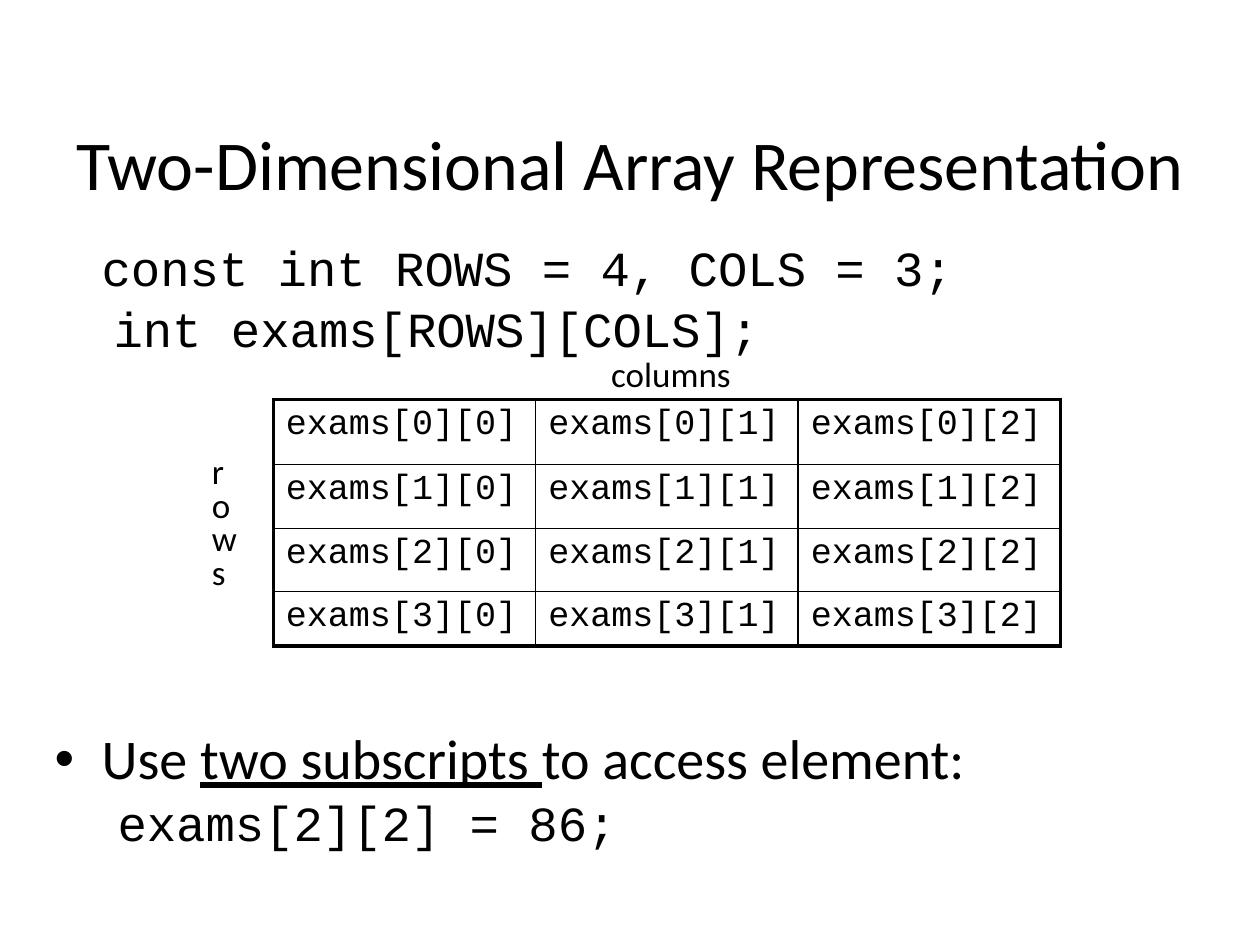
from dataclasses import dataclass

from lxml.etree import SubElement
from pptx import Presentation
from pptx.dml.color import RGBColor
from pptx.enum.text import MSO_ANCHOR as Anchor, MSO_AUTO_SIZE as AutoSize, PP_ALIGN as Align
from pptx.oxml import parse_xml
from pptx.oxml.ns import nsdecls, qn
from pptx.util import Cm, Pt


@dataclass(frozen=True)
class Theme:
    ink: str = "000000"
    sans: str = "Calibri"
    mono: str = "Courier New"
    title: int = 40
    bullet: int = 32
    code: int = 28
    label: int = 20
    outer: float = 2.25
    inner: float = 1


T = Theme()


def set_all(obj, **values):
    for name, value in values.items():
        setattr(obj, name, value)


def add_run(p, text, size, font=T.sans, **extra):
    r = p.add_run()
    r.text = text
    set_all(r.font, size=Pt(size), name=font, **extra)
    r.font.color.rgb = RGBColor.from_string(T.ink)


def add_paragraph(tf, first=False, **spacing):
    p = tf.paragraphs[0] if first else tf.add_paragraph()
    set_all(p, **spacing)
    return p


def indent(p, left, hanging=0, bullet=None):
    pPr = p._p.get_or_add_pPr()
    pPr.set("marL", str(Cm(left)))
    pPr.set("indent", str(-Cm(hanging)))
    if bullet:
        SubElement(pPr, qn("a:buFont")).set("typeface", "Arial")
        SubElement(pPr, qn("a:buChar")).set("char", bullet)


def add_title(s, text):
    sp = s.shapes.title
    set_all(sp, left=Cm(0.64), top=Cm(1.48), width=Cm(24.13), height=Cm(3.6))
    tf = sp.text_frame
    set_all(tf, vertical_anchor=Anchor.MIDDLE, word_wrap=True)
    add_run(add_paragraph(tf, True, alignment=Align.CENTER), text, T.title)


def add_body(s):
    tf = s.shapes.add_textbox(Cm(0.85), Cm(3.6), Cm(21.6), Cm(13.55)).text_frame
    set_all(tf, word_wrap=True, margin_top=Cm(1.33))
    lines = [
        (0, 0.95, 0, None, [("const int ROWS = 4, COLS = 3;", T.code, T.mono, {})]),
        (4.5, 1.19, 0, None, [("int exams[ROWS][COLS];", T.code, T.mono, {})]),
        (213, 0.95, 0.95, "•", [
            ("Use ", T.bullet, T.sans, {}),
            ("two subscripts ", T.bullet, T.sans, {"underline": True}),
            ("to access element:", T.bullet, T.sans, {}),
        ]),
        (4.5, 1.27, 0, None, [("exams[2][2] = 86;", T.code, T.mono, {})]),
    ]
    for i, (before, left, hanging, bullet, runs) in enumerate(lines):
        p = add_paragraph(tf, i == 0, line_spacing=0.9, space_before=Pt(before))
        indent(p, left, hanging, bullet)
        for text, size, font, extra in runs:
            add_run(p, text, size, font, **extra)


def set_borders(cell, widths):
    tcPr = cell._tc.get_or_add_tcPr()
    for i, (side, width) in enumerate(widths.items()):
        tcPr.insert(i, parse_xml(
            f'<a:ln{side} {nsdecls("a")} w="{Pt(width)}"><a:solidFill>'
            f'<a:srgbClr val="{T.ink}"/></a:solidFill></a:ln{side}>'))


def add_array(s, heights, cols, col_width):
    rows = len(heights)
    frame = s.shapes.add_table(rows, cols, Cm(5.51), Cm(8.05),
                               Cm(col_width * cols), Cm(sum(heights)))
    table = frame.table
    set_all(table, first_row=False, horz_banding=False)
    for col in table.columns:
        col.width = Cm(col_width)
    for i, height in enumerate(heights):
        table.rows[i].height = Cm(height)
        for j in range(cols):
            cell = table.cell(i, j)
            cell.fill.background()
            edges = {"L": j == 0, "R": j == cols - 1, "T": i == 0, "B": i == rows - 1}
            set_borders(cell, {k: T.outer if edge else T.inner for k, edge in edges.items()})
            add_run(cell.text_frame.paragraphs[0], f"exams[{i}][{j}]", T.label, T.mono)


def add_label(s, lines, box, spacing=None):
    tf = s.shapes.add_textbox(*map(Cm, box)).text_frame
    set_all(tf, word_wrap=False, auto_size=AutoSize.SHAPE_TO_FIT_TEXT)
    for i, text in enumerate(lines):
        add_run(add_paragraph(tf, i == 0, line_spacing=spacing), text, T.label)


def main():
    prs = Presentation()
    set_all(prs, slide_width=Cm(25.4), slide_height=Cm(19.05))
    s = prs.slides.add_slide(prs.slide_layouts[5])
    add_title(s, "Two-Dimensional Array Representation")
    add_body(s)
    add_array(s, heights=(1.31, 1.29, 1.27, 1.02), cols=3, col_width=5.29)
    add_label(s, ["columns"], (12.07, 6.99, 3.15, 1.09))
    add_label(s, "rows", (4.02, 9.1, 1.02, 2.97), spacing=0.8)
    prs.save("out.pptx")


if __name__ == "__main__":
    main()
